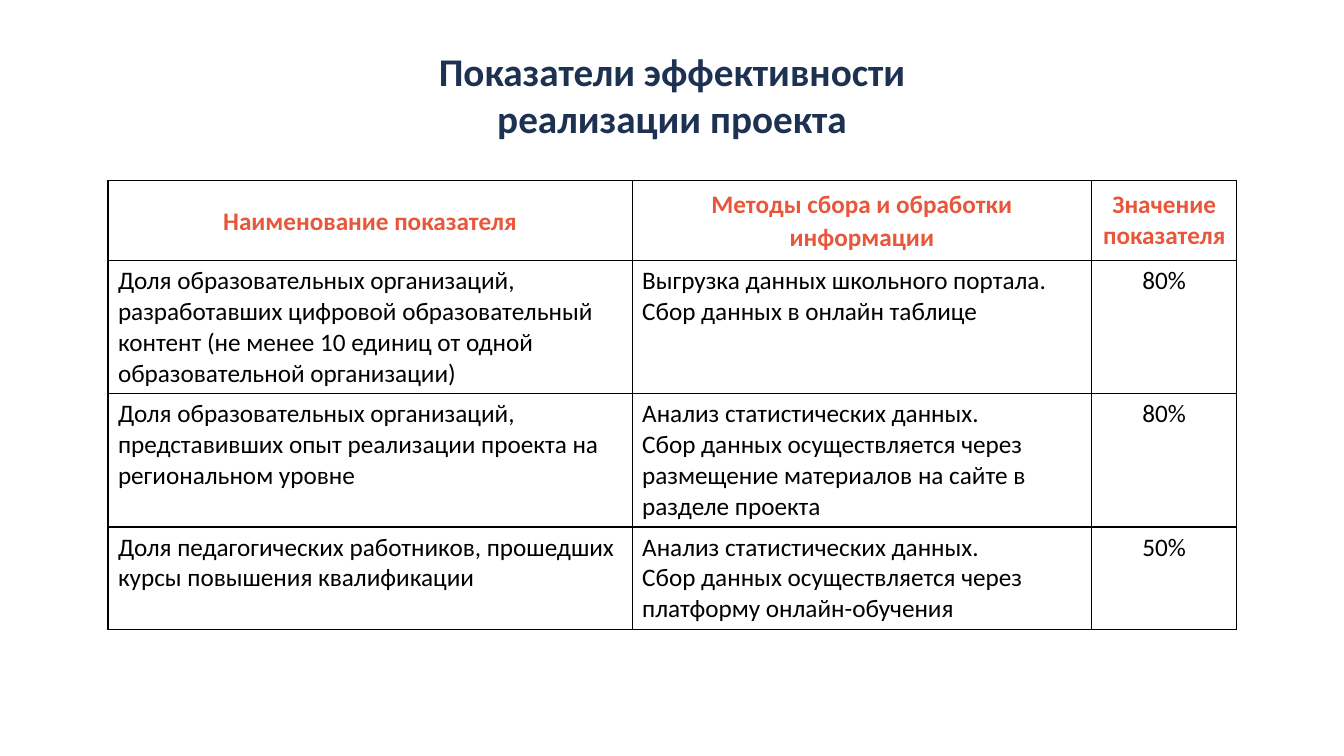
from dataclasses import dataclass

from lxml.etree import SubElement
from pptx import Presentation
from pptx.dml.color import RGBColor
from pptx.enum.text import MSO_ANCHOR as Anchor, PP_ALIGN as Align
from pptx.oxml.ns import qn
from pptx.util import Cm, Pt


@dataclass(frozen=True)
class Theme:
    font: str = "Calibri"
    title_size: int = 28
    table_size: int = 18
    title: str = "1D3152"
    header: str = "E8573B"
    body: str = "000000"
    border: str = "000000"
    border_width: int = 1


theme = Theme()


def write(frame, text, size=theme.table_size, color=theme.body, bold=False,
          align=Align.LEFT, spacing=None):
    """Fill a text frame; each line of the text becomes a paragraph."""
    frame.word_wrap = True
    for number, line in enumerate(text.split("\n")):
        paragraph = frame.add_paragraph() if number else frame.paragraphs[0]
        paragraph.alignment = align
        if spacing:
            paragraph.line_spacing = spacing
        run = paragraph.add_run()
        run.text = line
        run.font.name = theme.font
        run.font.size = Pt(size)
        run.font.bold = bold
        run.font.color.rgb = RGBColor.from_string(color)


def add_borders(cell):
    properties = cell._tc.get_or_add_tcPr()
    for side in ("a:lnL", "a:lnR", "a:lnT", "a:lnB"):
        line = SubElement(properties, qn(side), w=str(Pt(theme.border_width)))
        fill = SubElement(line, qn("a:solidFill"))
        SubElement(fill, qn("a:srgbClr"), val=theme.border)


deck = Presentation()
deck.slide_width, deck.slide_height = Cm(33.87), Cm(19.05)
slide = deck.slides.add_slide(deck.slide_layouts[6])

# Table content
headers = ["Наименование показателя", "Методы сбора и обработки информации",
           "Значение показателя"]
indicators = [
    ("Доля образовательных организаций, разработавших цифровой образовательный "
     "контент (не менее 10 единиц от одной образовательной организации)",
     "Выгрузка данных школьного портала.\nСбор данных в онлайн таблице",
     "80%"),
    ("Доля образовательных организаций, представивших опыт реализации проекта "
     "на региональном уровне",
     "Анализ статистических данных.\nСбор данных осуществляется через "
     "размещение материалов на сайте в разделе проекта",
     "80%"),
    ("Доля педагогических работников, прошедших курсы повышения квалификации",
     "Анализ статистических данных.\nСбор данных осуществляется через "
     "платформу онлайн-обучения",
     "50%"),
]
column_widths = [13.21, 11.58, 3.66]
row_heights = [2, 3.35, 3.35, 2.57]

# Table grid
indicator_table = slide.shapes.add_table(
    len(row_heights), len(column_widths), Cm(2.72), Cm(4.55),
    Cm(sum(column_widths)), Cm(sum(row_heights))).table
indicator_table.first_row = False
indicator_table.horz_banding = False
for column, width in zip(indicator_table.columns, column_widths):
    column.width = Cm(width)
for row, height in zip(indicator_table.rows, row_heights):
    row.height = Cm(height)
for cell in indicator_table.iter_cells():
    add_borders(cell)
    cell.fill.background()

# Header row: the two wide columns have even margins and looser lines
for index, header in enumerate(headers):
    cell = indicator_table.cell(0, index)
    cell.vertical_anchor = Anchor.MIDDLE
    is_wide = index < 2
    if is_wide:
        cell.margin_left = cell.margin_right = Cm(0.18)
        cell.margin_top = cell.margin_bottom = Cm(0.18)
    write(cell.text_frame, header, color=theme.header, bold=True,
          align=Align.CENTER, spacing=1.07 if is_wide else None)

# Indicator rows: the value column is centred
for row_index, indicator in enumerate(indicators, start=1):
    for index, text in enumerate(indicator):
        write(indicator_table.cell(row_index, index).text_frame, text,
              align=Align.CENTER if index == 2 else Align.LEFT)

# Title
title = slide.shapes.add_textbox(Cm(8.47), Cm(1.06), Cm(16.93), Cm(2.65))
write(title.text_frame, "Показатели эффективности реализации проекта",
      size=theme.title_size, color=theme.title, bold=True, align=Align.CENTER)

deck.save("out.pptx")
